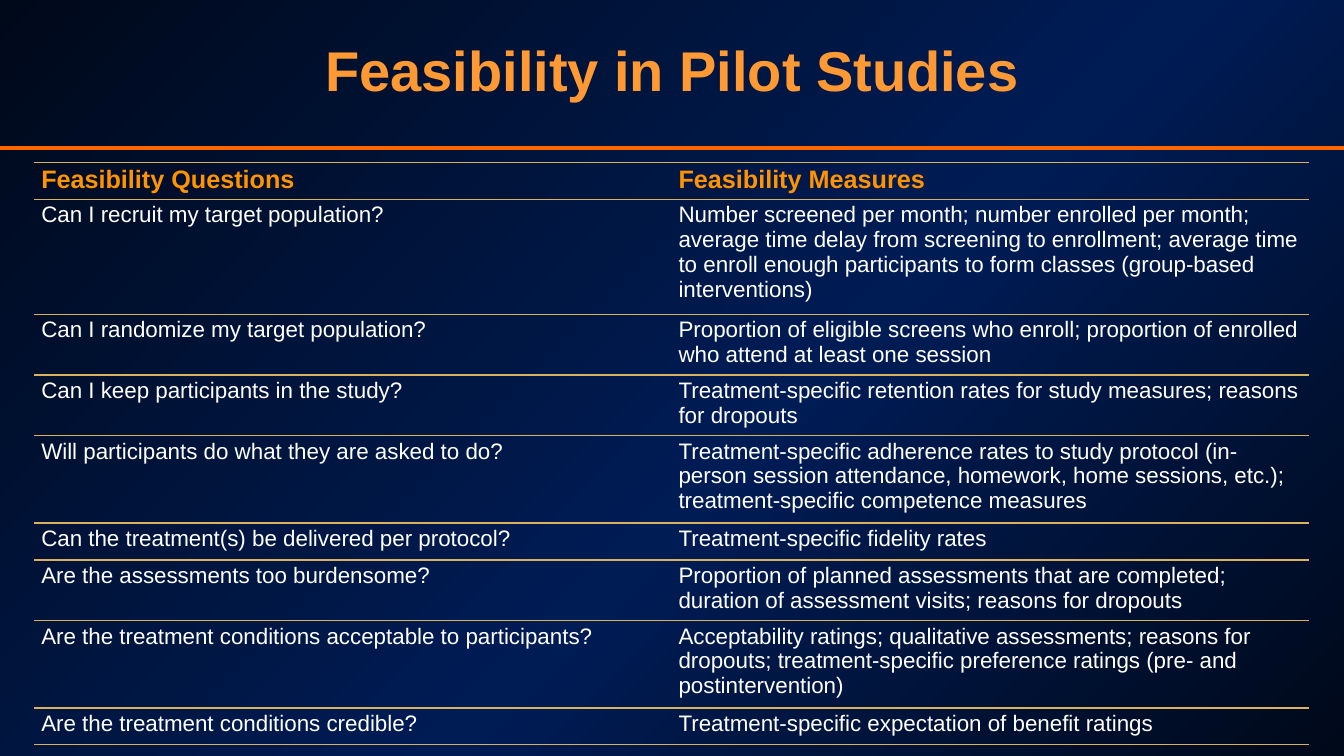
from copy import deepcopy
from pptx import Presentation
from pptx.dml.color import RGBColor as RGB
from pptx.enum.shapes import MSO_CONNECTOR as Link
from pptx.enum.text import MSO_ANCHOR as Anchor, MSO_AUTO_SIZE as Fit, PP_ALIGN as Align
from pptx.oxml import parse_xml
from pptx.oxml.ns import nsdecls
from pptx.util import Cm, Pt

COLORS = {"edge": "00091A", "mid": "001C55", "rule": "FF6600", "title": "FF9933",
          "head": "FF9300", "body": "FFFFFF", "border": "D8B25C"}

# Question, measure, row height in cm
ROWS = [
    ("Feasibility Questions", "Feasibility Measures", 0.93),
    ("Can I recruit my target population?",
     "Number screened per month; number enrolled per month; average time delay from "
     "screening to enrollment; average time to enroll enough participants to form "
     "classes (group-based interventions)", 2.9),
    ("Can I randomize my target population?",
     "Proportion of eligible screens who enroll; proportion of enrolled who attend "
     "at least one session", 1.53),
    ("Can I keep participants in the study?",
     "Treatment-specific retention rates for study measures; reasons for dropouts", 1.53),
    ("Will participants do what they are asked to do?",
     "Treatment-specific adherence rates to study protocol (in-person session "
     "attendance, homework, home sessions, etc.); treatment-specific competence "
     "measures", 2.2),
    ("Can the treatment(s) be delivered per protocol?",
     "Treatment-specific fidelity rates", 0.93),
    ("Are the assessments too burdensome?",
     "Proportion of planned assessments that are completed; duration of assessment "
     "visits; reasons for dropouts", 1.53),
    ("Are the treatment conditions acceptable to participants?",
     "Acceptability ratings; qualitative assessments; reasons for dropouts; "
     "treatment-specific preference ratings (pre- and postintervention)", 2.2),
    ("Are the treatment conditions credible?",
     "Treatment-specific expectation of benefit ratings", 0.93),
]


def style(font, size, color, bold):
    for key, value in {"name": "Arial", "size": Pt(size), "bold": bold}.items():
        setattr(font, key, value)
    font.color.rgb = RGB.from_string(COLORS[color])


def border(cell, sides, paint):
    for side in sides:
        line = parse_xml(f'<a:ln{side} {nsdecls("a")} w="12700">{paint}</a:ln{side}>')
        cell.fill.background()
        props = cell._tc.get_or_add_tcPr()
        props.insert(len(props) - 1, line)


deck = Presentation()
deck.slide_width, deck.slide_height = Cm(33.87), Cm(19.05)
slide = deck.slides.add_slide(deck.slide_layouts[5])

# Background: dark corners, blue diagonal
fill = slide.background.fill
fill.gradient()
fill.gradient_angle = 315
stops = slide.element.xpath(".//a:gsLst")[0]
stops.insert(1, deepcopy(stops[0]))
for stop, (place, name) in zip(fill.gradient_stops, [(0, "edge"), (0.57, "mid"), (1, "edge")]):
    stop.position = place
    stop.color.rgb = RGB.from_string(COLORS[name])

# Rule under the title
rule = slide.shapes.add_connector(Link.STRAIGHT, 0, Cm(3.73), deck.slide_width, Cm(3.73))
rule.line.width = Pt(3)
rule.line.color.rgb = RGB.from_string(COLORS["rule"])
rule._element.spPr.append(parse_xml(f'<a:effectLst {nsdecls("a")}/>'))

# Title
title = slide.shapes.title
box = {"left": 0, "top": Cm(0.76), "width": deck.slide_width, "height": Cm(1.96)}
for key, value in box.items():
    setattr(title, key, value)
frame = title.text_frame
frame.text = "Feasibility in Pilot Studies"
frame.auto_size = Fit.SHAPE_TO_FIT_TEXT
frame.vertical_anchor = Anchor.MIDDLE
frame.paragraphs[0].alignment = Align.CENTER
style(frame.paragraphs[0].runs[0].font, 40, "title", True)

# Table
total = sum(row[2] for row in ROWS)
table = slide.shapes.add_table(len(ROWS), 2, Cm(0.86), Cm(4.09), Cm(32.12), Cm(total)).table
table.first_row = table.horz_banding = False
inset = {"margin_left": Cm(0.18), "margin_right": Cm(0.18),
         "margin_top": Cm(0.08), "margin_bottom": Cm(0.08)}
paint = f'<a:solidFill><a:srgbClr val="{COLORS["border"]}"/></a:solidFill>'
for r, (*texts, height) in enumerate(ROWS):
    table.rows[r].height = Cm(height)
    for c, text in enumerate(texts):
        cell = table.cell(r, c)
        cell.text = text
        for key, value in inset.items():
            setattr(cell, key, value)
        look = (18, "head", True) if r == 0 else (16, "body", False)
        style(cell.text_frame.paragraphs[0].runs[0].font, *look)
        border(cell, "LR", "<a:noFill/>")
        border(cell, "TB", paint)

deck.save("out.pptx")
